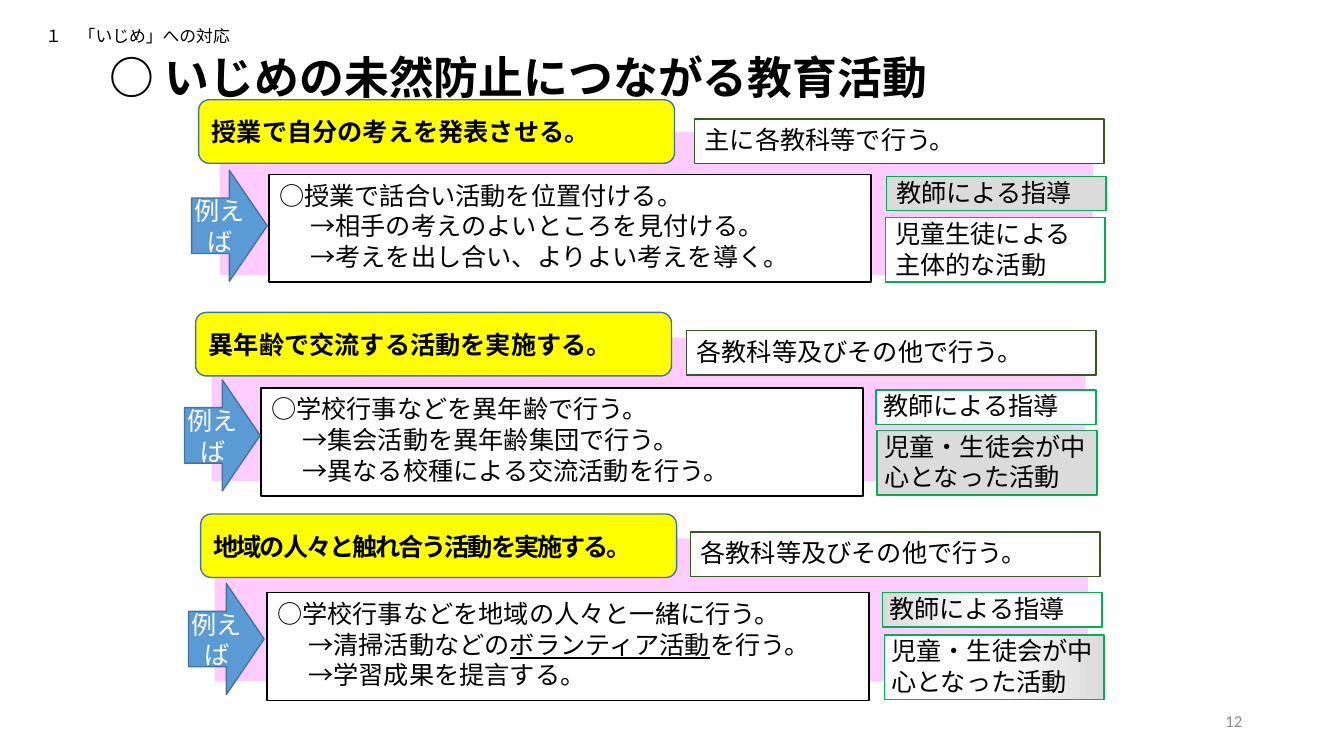
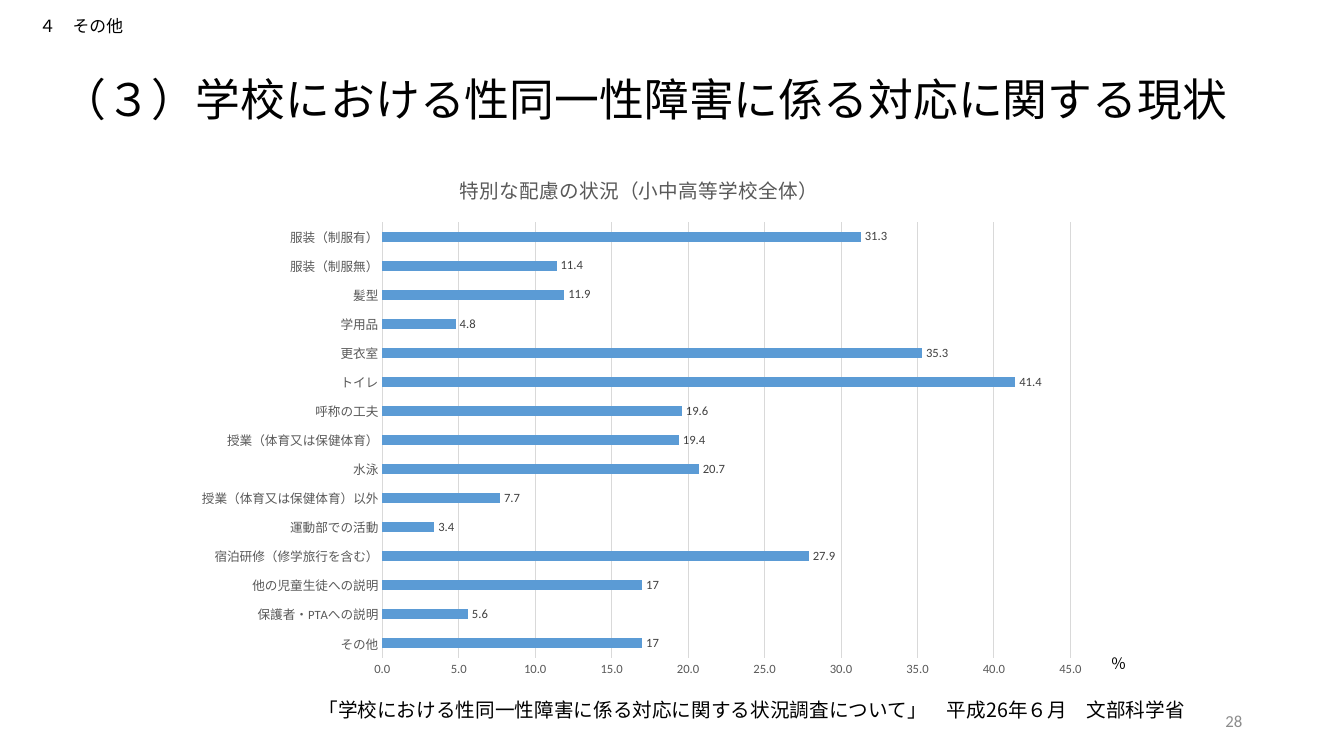
from lxml import etree
from pptx import Presentation
from pptx.chart.data import CategoryChartData
from pptx.dml.color import RGBColor
from pptx.enum.chart import XL_CHART_TYPE, XL_LABEL_POSITION, XL_TICK_MARK
from pptx.enum.shapes import MSO_SHAPE
from pptx.enum.text import MSO_ANCHOR, MSO_AUTO_SIZE, PP_ALIGN
from pptx.oxml.ns import qn
from pptx.util import Inches, Pt

BLACK = RGBColor(0x00, 0x00, 0x00)
WHITE = RGBColor(0xFF, 0xFF, 0xFF)
PINK = RGBColor(0xFF, 0xCC, 0xFF)
YELLOW = RGBColor(0xFF, 0xFF, 0x00)
BLUE = RGBColor(0x5B, 0x9B, 0xD5)
NAVY = RGBColor(0x43, 0x73, 0x9E)
GREEN = RGBColor(0x00, 0xB0, 0x50)
FOREST = RGBColor(0x38, 0x57, 0x23)
SILVER = RGBColor(0xDB, 0xDB, 0xDB)
GRID = RGBColor(0xD9, 0xD9, 0xD9)
NUMBER_GRAY = RGBColor(0x8C, 0x8C, 0x8C)
AXIS_GRAY = RGBColor(0x59, 0x59, 0x59)
LABEL_GRAY = RGBColor(0x40, 0x40, 0x40)

LATIN = "Calibri"
JAPANESE = "Noto Sans CJK JP"
LINE_HEIGHT = 1.22
STEP_INDENT = Inches(0.31)

RECTANGLE = MSO_SHAPE.RECTANGLE
ROUNDED = MSO_SHAPE.ROUNDED_RECTANGLE
ARROW = MSO_SHAPE.RIGHT_ARROW
TOP, MIDDLE, BOTTOM = MSO_ANCHOR.TOP, MSO_ANCHOR.MIDDLE, MSO_ANCHOR.BOTTOM
LEFT, CENTER, RIGHT = PP_ALIGN.LEFT, PP_ALIGN.CENTER, PP_ALIGN.RIGHT


def write(frame, lines, size=18, face=LATIN, color=BLACK, bold=False,
          align=LEFT, anchor=TOP, insets=(0.1, 0.05), spacing=None):
    side, edge = (Inches(inset) for inset in insets)
    frame_format = {
        "word_wrap": True, "auto_size": MSO_AUTO_SIZE.NONE, "vertical_anchor": anchor,
        "margin_left": side, "margin_right": side,
        "margin_top": edge, "margin_bottom": edge,
    }
    for name, value in frame_format.items():
        setattr(frame, name, value)
    for number, spans in enumerate(lines):
        para = frame.add_paragraph() if number else frame.paragraphs[0]
        para.alignment = align
        para.line_spacing = Pt(round(size * LINE_HEIGHT, 1))
        if spans[0].startswith("→"):
            para._p.get_or_add_pPr().set("marL", str(STEP_INDENT))
        for position, words in enumerate(spans):
            span = para.add_run()
            span.text = words
            span_format = {"size": Pt(size), "name": face, "bold": bold,
                           "underline": position % 2 == 1}
            for name, value in span_format.items():
                setattr(span.font, name, value)
            span.font.color.rgb = color
            properties = span._r.get_or_add_rPr()
            etree.SubElement(properties, qn("a:ea"), typeface=JAPANESE)
            if spacing:
                properties.set("spc", str(spacing))


def add_box(page, kind, place, size, fill, line=None):
    box = page.shapes.add_shape(kind, *(Inches(length) for length in place + size))
    box.shadow.inherit = False
    if isinstance(fill, int):
        box.fill.gradient()
        box.fill.gradient_angle = fill
        for stop, color, position in zip(box.fill.gradient_stops, (SILVER, WHITE), (0, 0.5)):
            stop.color.rgb = color
            stop.position = position
    else:
        box.fill.solid()
        box.fill.fore_color.rgb = fill
    if line is None:
        box.line.fill.background()
    else:
        box.line.color.rgb = line
        box.line.width = Pt(1)
    return box


deck = Presentation()
deck.slide_width = Inches(13.33)
deck.slide_height = Inches(7.5)

PAGES = [
    {"title": "○ いじめの未然防止につながる教育活動", "title_at": (0.99, 0.44, 9.65, 0.64),
     "bold": True, "section": "１　「いじめ」への対応",
     "section_at": (0.35, 0.24, 3.67, 0.26), "number": "12"},
    {"title": "（３）学校における性同一性障害に係る対応に関する現状",
     "title_at": (0.51, 0.65, 11.91, 0.64), "bold": False, "section": "４　その他",
     "section_at": (0.29, 0.14, 3.64, 0.27), "number": "28"},
]
pages = []
for item in PAGES:
    page = deck.slides.add_slide(deck.slide_layouts[5])
    title = page.shapes.title
    title.left, title.top, title.width, title.height = map(Inches, item["title_at"])
    write(title.text_frame, [[item["title"]]], 32, JAPANESE, bold=item["bold"],
          anchor=MIDDLE, insets=(0.1, 0))
    section = page.shapes.add_textbox(*map(Inches, item["section_at"]))
    write(section.text_frame, [[item["section"]]], 12, JAPANESE, anchor=BOTTOM)
    number = page.shapes.add_textbox(Inches(9.42), Inches(6.95), Inches(3), Inches(0.4))
    write(number.text_frame, [[item["number"]]], 12, color=NUMBER_GRAY,
          align=RIGHT, anchor=MIDDLE)
    pages.append(page)
activity_page, survey_page = pages

ACTIVITIES = [
    {"panel": (2.18, 1.31), "banner": (1.97, 0.99), "example": (2.67, 1.73),
     "arrow": (1.9, 1.69), "teacher": (8.79, 1.75), "pupils": (8.78, 2.16),
     "scope": (6.89, 1.18), "fills": (SILVER, WHITE), "spacing": None, "tag_inset": 0.1,
     "heading": "授業で自分の考えを発表させる。",
     "scope_text": "主に各教科等で行う。", "pupils_text": "児童生徒による主体的な活動",
     "lines": [["○授業で話合い活動を位置付ける。"],
               ["→相手の考えのよいところを見付ける。"],
               ["→考えを出し合い、よりよい考えを導く。"]]},
    {"panel": (2.1, 3.35), "banner": (1.94, 3.1), "example": (2.59, 3.85),
     "arrow": (1.83, 3.77), "teacher": (8.69, 3.87), "pupils": (8.7, 4.27),
     "scope": (6.81, 3.28), "fills": (WHITE, SILVER), "spacing": None, "tag_inset": 0.07,
     "heading": "異年齢で交流する活動を実施する。",
     "scope_text": "各教科等及びその他で行う。", "pupils_text": "児童・生徒会が中心となった活動",
     "lines": [["○学校行事などを異年齢で行う。"],
               ["→集会活動を異年齢集団で行う。"],
               ["→異なる校種による交流活動を行う。"]]},
    {"panel": (2.13, 5.34), "banner": (1.99, 5.1), "example": (2.65, 5.88),
     "arrow": (1.87, 5.79), "teacher": (8.75, 5.88), "pupils": (8.77, 6.3),
     "scope": (6.85, 5.28), "fills": (0, 180), "spacing": -150, "tag_inset": 0.07,
     "heading": "地域の人々と触れ合う活動を実施する。",
     "scope_text": "各教科等及びその他で行う。", "pupils_text": "児童・生徒会が中心となった活動",
     "lines": [["○学校行事などを地域の人々と一緒に行う。"],
               ["→清掃活動などの", "ボランティア活動", "を行う。"],
               ["→学習成果を提言する。"]]},
]
for item in ACTIVITIES:
    add_box(activity_page, RECTANGLE, item["panel"], (8.66, 1.42), PINK)
    banner = add_box(activity_page, ROUNDED, item["banner"], (4.72, 0.63), YELLOW, NAVY)
    write(banner.text_frame, [[item["heading"]]], face=JAPANESE, bold=True,
          anchor=MIDDLE, spacing=item["spacing"])
    example = add_box(activity_page, RECTANGLE, item["example"], (5.97, 1.07), WHITE, BLACK)
    write(example.text_frame, item["lines"], face=JAPANESE)
    arrow = add_box(activity_page, ARROW, item["arrow"], (0.75, 1.1), BLUE, NAVY)
    write(arrow.text_frame, [["例えば"]], color=WHITE, align=CENTER,
          anchor=MIDDLE, insets=(0, 0))
    tags = [("teacher", 0.34, "教師による指導"), ("pupils", 0.64, item["pupils_text"])]
    for (role, height, words), fill in zip(tags, item["fills"]):
        tag = add_box(activity_page, RECTANGLE, item[role], (2.18, height), fill, GREEN)
        write(tag.text_frame, [[words]], insets=(item["tag_inset"], 0))
    scope = add_box(activity_page, RECTANGLE, item["scope"], (4.06, 0.44), WHITE, FOREST)
    write(scope.text_frame, [[item["scope_text"]]])

SURVEY = {
    "その他": 17, "保護者・PTAへの説明": 5.6, "他の児童生徒への説明": 17,
    "宿泊研修（修学旅行を含む）": 27.9, "運動部での活動": 3.4,
    "授業（体育又は保健体育）以外": 7.7, "水泳": 20.7, "授業（体育又は保健体育）": 19.4,
    "呼称の工夫": 19.6, "トイレ": 41.4, "更衣室": 35.3, "学用品": 4.8,
    "髪型": 11.9, "服装（制服無）": 11.4, "服装（制服有）": 31.3,
}
data = CategoryChartData()
data.categories = list(SURVEY)
data.add_series("Series 1", list(SURVEY.values()))
chart = survey_page.shapes.add_chart(
    XL_CHART_TYPE.BAR_CLUSTERED, Inches(1.79), Inches(1.52), Inches(9.1), Inches(5.27), data
).chart
chart.has_legend = False
chart.has_title = True
chart.chart_title.include_in_layout = False
chart.chart_title.text_frame.text = "特別な配慮の状況（小中高等学校全体）"
title_font = chart.chart_title.text_frame.paragraphs[0].runs[0].font

plot = chart.plots[0]
plot.gap_width = 182
plot.vary_by_categories = False
plot.has_data_labels = True
labels = plot.data_labels
labels.show_value = True
labels.position = XL_LABEL_POSITION.OUTSIDE_END
bars = plot.series[0].format.fill
bars.solid()
bars.fore_color.rgb = BLUE

categories, values = chart.category_axis, chart.value_axis
categories.format.line.color.rgb = GRID
categories.format.line.width = Pt(0.75)
values.format.line.fill.background()
values.minimum_scale, values.maximum_scale, values.major_unit = 0, 45, 5
values.tick_labels.number_format = "0.0"
values.tick_labels.number_format_is_linked = False
values.major_gridlines.format.line.color.rgb = GRID
values.major_gridlines.format.line.width = Pt(0.75)
for axis in (categories, values):
    axis.major_tick_mark = axis.minor_tick_mark = XL_TICK_MARK.NONE
categories.has_major_gridlines = False

CHART_FONTS = [
    (chart.font, 10, BLACK), (title_font, 14, AXIS_GRAY), (labels.font, 9, LABEL_GRAY),
    (categories.tick_labels.font, 9, AXIS_GRAY), (values.tick_labels.font, 9, AXIS_GRAY),
]
for font, size, color in CHART_FONTS:
    font.size, font.name, font.bold = Pt(size), LATIN, False
    font.color.rgb = color

plot_area = chart.element.find(".//" + qn("c:plotArea"))
for layout in plot_area.findall(qn("c:layout")):
    plot_area.remove(layout)
layout = etree.Element(qn("c:layout"))
plot_area.insert(0, layout)
manual = etree.SubElement(layout, qn("c:manualLayout"))
PLOT_LAYOUT = {"layoutTarget": "inner", "xMode": "edge", "yMode": "edge",
               "x": 0.22, "y": 0.13, "w": 0.75, "h": 0.82}
for name, value in PLOT_LAYOUT.items():
    etree.SubElement(manual, qn("c:" + name), val=str(value))

unit = add_box(survey_page, RECTANGLE, (10.92, 6.44), (0.45, 0.35), WHITE)
write(unit.text_frame, [["％"]], 11)
citation = survey_page.shapes.add_textbox(Inches(3.06), Inches(6.87), Inches(10.45), Inches(0.47))
write(citation.text_frame,
      [["「学校における性同一性障害に係る対応に関する状況調査について」　平成26年６月　文部科学省"]],
      14, JAPANESE)

deck.save("out.pptx")
